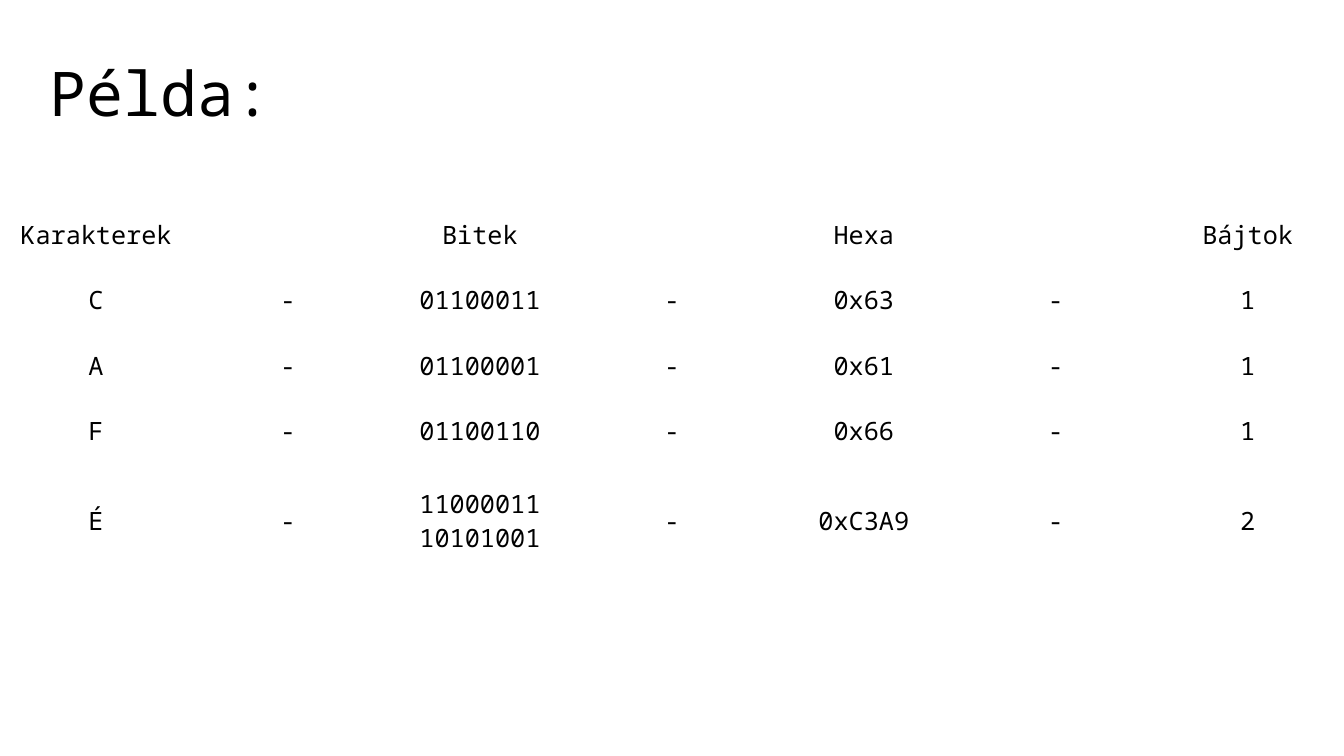
import pptx
import pptx.dml.color
import pptx.enum.text
import pptx.util

Pt = pptx.util.Pt
BLACK = pptx.dml.color.RGBColor(0x00, 0x00, 0x00)
FONT = "Noto Sans Mono"
MIDDLE = pptx.enum.text.MSO_ANCHOR.MIDDLE
CENTER = pptx.enum.text.PP_ALIGN.CENTER
LEFT = pptx.enum.text.PP_ALIGN.LEFT

SLIDE_W, SLIDE_H = 960, 540
ROW_HEIGHTS = [46.8, 46.8, 46.8, 46.8, 81.6]
ROWS = [
    ("Karakterek", "Bitek", "Hexa", "Bájtok"),
    ("C", "01100011", "0x63", "1"),
    ("A", "01100001", "0x61", "1"),
    ("F", "01100110", "0x66", "1"),
    ("É", "11000011 10101001", "0xC3A9", "2"),
]
COLUMNS = 2 * len(ROWS[0]) - 1


def write(tf, text, size, align):
    tf.word_wrap = True
    tf.vertical_anchor = MIDDLE
    p = tf.paragraphs[0]
    p.alignment = align
    r = p.add_run()
    r.text = text
    for name, value in {"name": FONT, "size": Pt(size), "bold": False}.items():
        setattr(r.font, name, value)
    r.font.color.rgb = BLACK
    return p


prs = pptx.Presentation()
prs.slide_width, prs.slide_height = Pt(SLIDE_W), Pt(SLIDE_H)
s = prs.slides.add_slide(prs.slide_layouts[5])

# Title
title = s.shapes.title
box = {"left": 28, "top": 35.3, "width": 180, "height": 67}
for name, value in box.items():
    setattr(title, name, Pt(value))
write(title.text_frame, "Példa:", 44, LEFT).line_spacing = 0.9

# Character table, with a dash column between each pair of value columns
table = s.shapes.add_table(len(ROWS), COLUMNS, 0, Pt(144),
                           Pt(SLIDE_W), Pt(sum(ROW_HEIGHTS))).table
table.first_row = False
table.horz_banding = False
for column in table.columns:
    column.width = Pt(round(SLIDE_W / COLUMNS, 2))

for i, (height, values) in enumerate(zip(ROW_HEIGHTS, ROWS)):
    table.rows[i].height = Pt(height)
    for j in range(COLUMNS):
        cell = table.cell(i, j)
        cell.fill.background()
        cell.vertical_anchor = MIDDLE
        if j % 2 == 0:
            write(cell.text_frame, values[j // 2], 18, CENTER)
        elif i > 0:
            write(cell.text_frame, "-", 18, CENTER)

prs.save("out.pptx")
